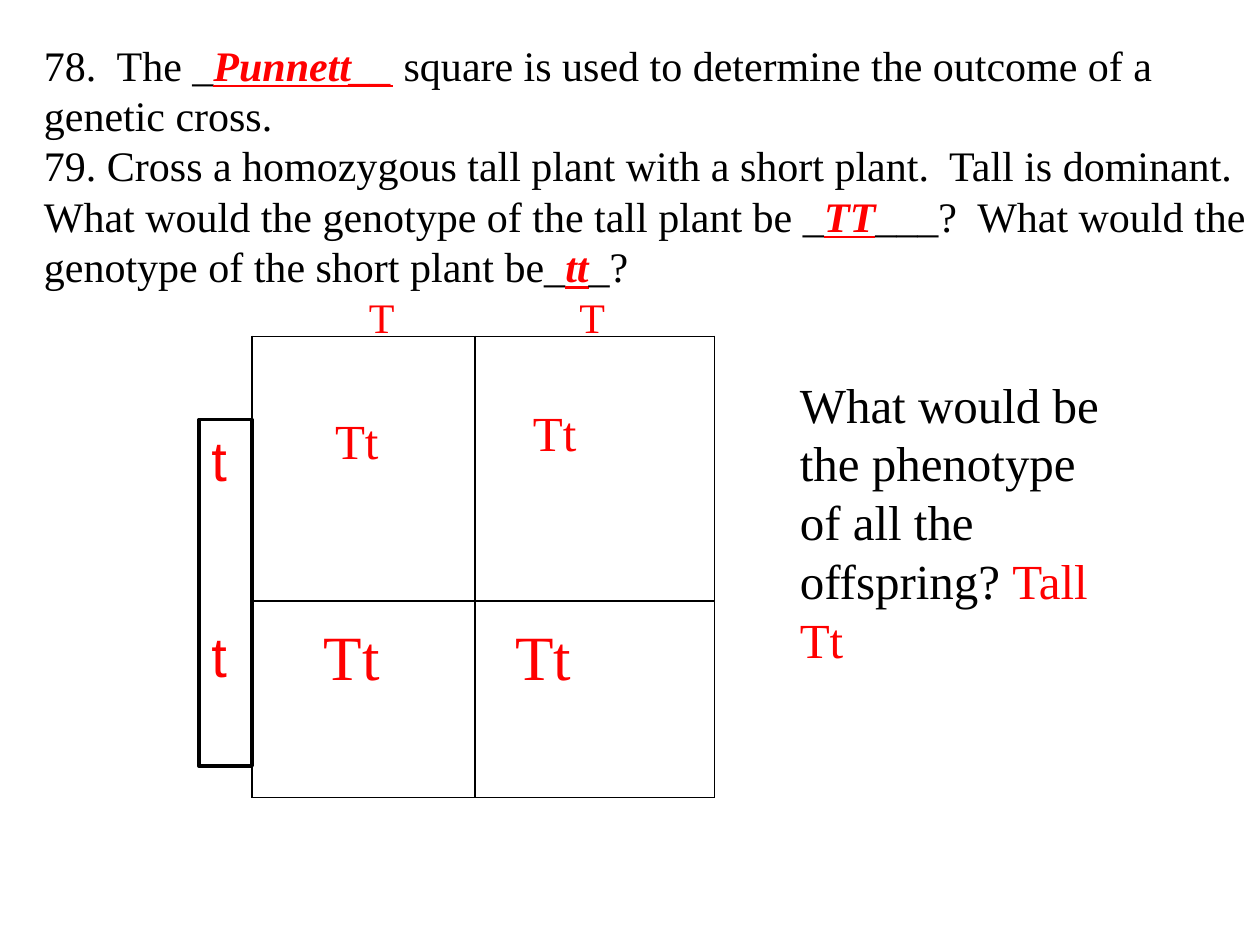
from lxml import etree
from pptx import Presentation
from pptx.dml.color import RGBColor
from pptx.enum.shapes import MSO_SHAPE
from pptx.enum.text import MSO_ANCHOR, PP_ALIGN
from pptx.oxml.ns import qn
from pptx.util import Inches, Pt

RECTANGLE = MSO_SHAPE.RECTANGLE
TOP, MIDDLE = MSO_ANCHOR.TOP, MSO_ANCHOR.MIDDLE
LEFT = PP_ALIGN.LEFT
COLORS = {"text": "000000", "answer": "FF0000", "paper": "FFFFFF"}
SERIF, SANS = "Times New Roman", "Arial"


def write_text(paragraph, text, size=24, font=SERIF, color="text", blank=False):
    """Append a run; blank marks a filled-in blank (bold, italic, underlined)."""
    run = paragraph.add_run()
    run.text = text
    run.font.size = Pt(size)
    run.font.name = font
    run.font.bold = run.font.italic = run.font.underline = blank
    run.font.color.rgb = RGBColor.from_string(COLORS[color])
    paragraph.alignment = LEFT


def add_cell_borders(cell, width):
    properties = cell._tc.get_or_add_tcPr()
    for index, side in enumerate(("lnL", "lnR", "lnT", "lnB")):
        line = etree.Element(qn(f"a:{side}"), w=str(Pt(width)))
        fill = etree.SubElement(line, qn("a:solidFill"))
        etree.SubElement(fill, qn("a:srgbClr"), val=COLORS["text"])
        properties.insert(index, line)


presentation = Presentation()
presentation.slide_width = Inches(10)
presentation.slide_height = Inches(7.5)
slide = presentation.slides.add_slide(presentation.slide_layouts[6])

# Punnett square: left and top margins place each genotype in its cell
column_widths = [1.77, 1.9]
row_heights = [2.1, 1.56]
genotypes = [
    [("Tt", 28, 0.66, 0.63), ("Tt", 28, 0.46, 0.57)],
    [("Tt", 36, 0.57, 0.19), ("Tt", 36, 0.32, 0.19)],
]
table_shape = slide.shapes.add_table(
    2, 2, Inches(2), Inches(2.67), Inches(sum(column_widths)), Inches(sum(row_heights)))
table = table_shape.table
table.first_row = table.horz_banding = False
for column, width in zip(table.columns, column_widths):
    column.width = Inches(width)
for row, height, row_genotypes in zip(table.rows, row_heights, genotypes):
    row.height = Inches(height)
    for cell, (genotype, size, left, top) in zip(row.cells, row_genotypes):
        cell.margin_left, cell.margin_right = Inches(left), Inches(0.07)
        cell.margin_top, cell.margin_bottom = Inches(top), Inches(0)
        cell.fill.background()
        add_cell_borders(cell, 1)
        write_text(cell.text_frame.paragraphs[0], genotype, size=size, color="answer")

# Questions, with the tall parent's alleles above the square
questions = slide.shapes.add_textbox(
    Inches(0.25), Inches(0.25), Inches(9.75), Inches(2.52)).text_frame
questions.word_wrap = True
questions.vertical_anchor = MIDDLE
question_parts = [
    ["78.  The _", "Punnett__",
     " square is used to determine the outcome of a genetic cross."],
    ["79. Cross a homozygous tall plant with a short plant.  Tall is dominant.  "
     "What would the genotype of the tall plant be _", "TT",
     "___?  What would the genotype of the short plant be_", "tt", "_?"],
]
for number, parts in enumerate(question_parts):
    paragraph = questions.add_paragraph() if number else questions.paragraphs[0]
    for index, part in enumerate(parts):
        is_answer = index % 2 == 1
        write_text(paragraph, part, color="answer" if is_answer else "text", blank=is_answer)

tall_alleles = questions.add_paragraph()
write_text(tall_alleles, "\tT\tT", color="answer")
tab_list = etree.SubElement(tall_alleles._p.get_or_add_pPr(), qn("a:tabLst"))
for position in (2.58, 4.25):
    etree.SubElement(tab_list, qn("a:tab"), pos=str(Inches(position)), algn="l")

# Short parent's alleles beside the square
short_parent = slide.shapes.add_shape(
    RECTANGLE, Inches(1.58), Inches(3.33), Inches(0.42), Inches(2.75))
short_parent.shadow.inherit = False
short_parent.fill.solid()
short_parent.fill.fore_color.rgb = RGBColor.from_string(COLORS["paper"])
short_parent.line.color.rgb = RGBColor.from_string(COLORS["text"])
short_parent.line.width = Pt(2)
short_alleles = short_parent.text_frame
short_alleles.vertical_anchor = TOP
write_text(short_alleles.paragraphs[0], "t", size=32, font=SANS, color="answer")
second_allele = short_alleles.add_paragraph()
second_allele.space_before = Pt(73.6)
write_text(second_allele, "t", size=32, font=SANS, color="answer")

# Phenotype question
phenotype = slide.shapes.add_textbox(
    Inches(6.25), Inches(2.92), Inches(2.75), Inches(2.46)).text_frame
phenotype.word_wrap = True
write_text(phenotype.paragraphs[0],
           "What would be the phenotype of all the offspring? ", size=28)
write_text(phenotype.paragraphs[0], "Tall", size=28, color="answer")
write_text(phenotype.add_paragraph(), "Tt", size=28, color="answer")

presentation.save("out.pptx")
